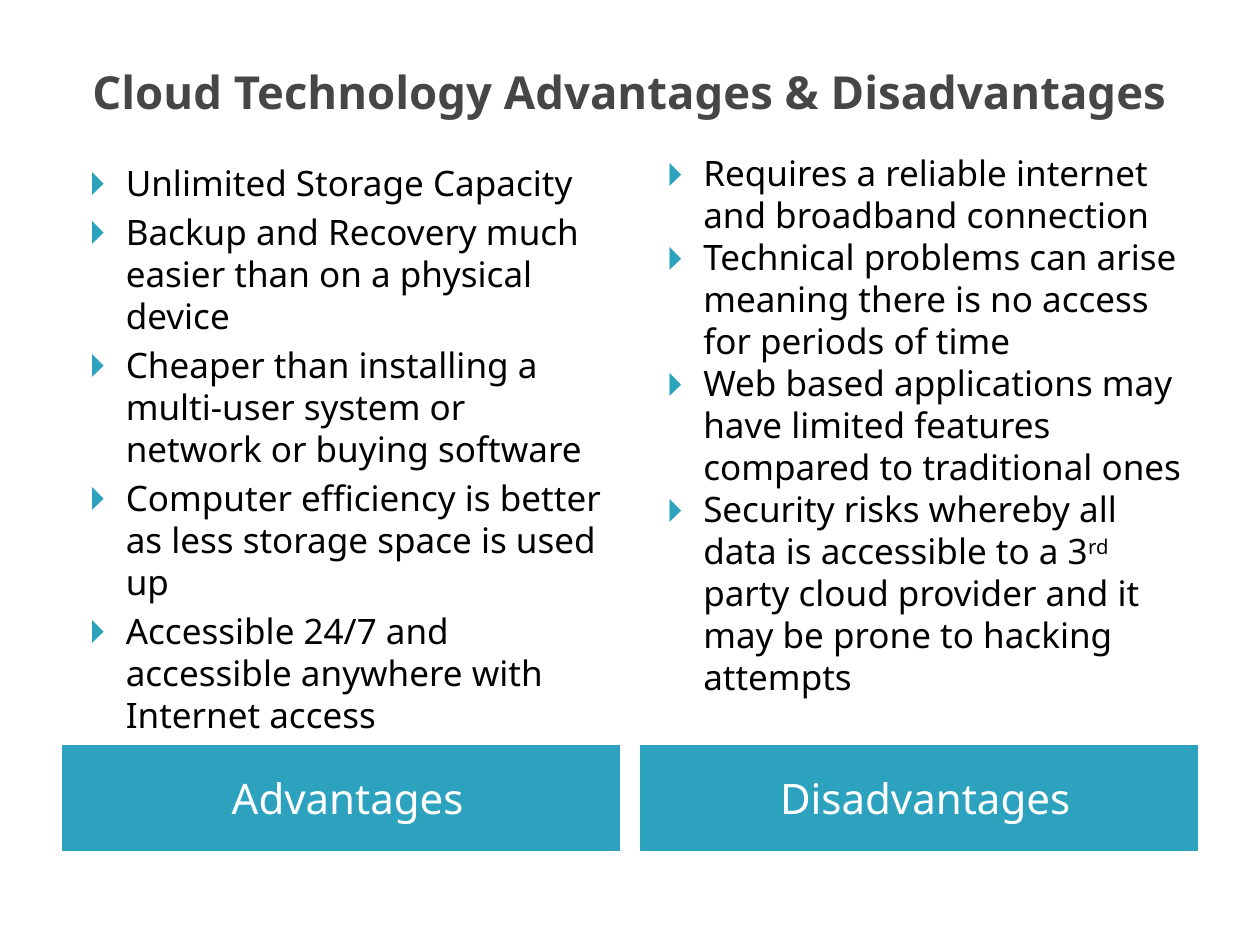
from dataclasses import dataclass

from lxml.etree import SubElement
from pptx import Presentation
from pptx.dml.color import RGBColor
from pptx.enum.shapes import MSO_SHAPE
from pptx.enum.text import MSO_ANCHOR, PP_ALIGN
from pptx.oxml.ns import qn
from pptx.util import Pt


@dataclass(frozen=True)
class Theme:
    font: str = "Noto Sans"
    accent: str = "2DA2BF"
    heading: str = "464646"
    body: str = "000000"
    on_accent: str = "FFFFFF"
    title_size: int = 26
    label_size: int = 24
    body_size: int = 20


THEME = Theme()
MARGIN, COLUMN_W, COLUMN_GAP = 36, 318, 12
BODY_BOTTOM = 424
LABEL_TOP, LABEL_H = 426, 60

ADVANTAGES = [
    ["Unlimited Storage Capacity"],
    ["Backup and Recovery much easier than on a physical device"],
    ["Cheaper than installing a multi-user system or network or buying software"],
    ["Computer efficiency is better as less storage space is used up"],
    ["Accessible 24/7 and accessible anywhere with Internet access"],
]
DISADVANTAGES = [
    ["Requires a reliable internet and broadband connection"],
    ["Technical problems can arise meaning there is no access for periods of time"],
    ["Web based applications may have limited features compared to traditional ones"],
    ["Security risks whereby all data is accessible to a 3", ("rd", 30),
     " party cloud provider and it may be prone to hacking attempts"],
]
# Label, bullets, top of the bullets, space between bullets
COLUMNS = [
    ("Advantages", ADVANTAGES, 88.5, 4),
    ("Disadvantages", DISADVANTAGES, 83, 0),
]


def add_run(p, text, size, color, bold=False, raised=0):
    r = p.add_run()
    r.text = text
    r.font.name = THEME.font
    r.font.size = Pt(size)
    r.font.bold = bold
    r.font.color.rgb = RGBColor.from_string(color)
    if raised:
        r.font._element.set("baseline", str(raised * 1000))


def add_bullet(p):
    pPr = p._p.get_or_add_pPr()
    pPr.set("marL", str(Pt(28.8)))
    pPr.set("indent", str(Pt(-20.16)))
    color = SubElement(pPr, qn("a:buClr"))
    SubElement(color, qn("a:srgbClr"), val=THEME.accent)
    SubElement(pPr, qn("a:buFont"), typeface=THEME.font)
    SubElement(pPr, qn("a:buChar"), char="🞂")


def add_title(slide, box, text):
    tf = slide.shapes.add_textbox(*map(Pt, box)).text_frame
    tf.word_wrap = True
    tf.vertical_anchor = MSO_ANCHOR.MIDDLE
    p = tf.paragraphs[0]
    p.alignment = PP_ALIGN.CENTER
    add_run(p, text, THEME.title_size, THEME.heading, bold=True)


def add_bullets(slide, box, items, gap):
    tf = slide.shapes.add_textbox(*map(Pt, box)).text_frame
    tf.word_wrap = True
    for i, item in enumerate(items):
        p = tf.add_paragraph() if i else tf.paragraphs[0]
        add_bullet(p)
        p.line_spacing = Pt(24)
        p.space_before = Pt(gap if i else 0)
        for part in item:
            text, raised = (part, 0) if isinstance(part, str) else part
            add_run(p, text, THEME.body_size, THEME.body, raised=raised)


def add_label(slide, box, text):
    sp = slide.shapes.add_shape(MSO_SHAPE.RECTANGLE, *map(Pt, box))
    sp.shadow.inherit = False
    sp.fill.solid()
    sp.fill.fore_color.rgb = RGBColor.from_string(THEME.accent)
    sp.line.color.rgb = RGBColor.from_string(THEME.accent)
    sp.line.width = Pt(0.75)
    tf = sp.text_frame
    tf.word_wrap = True
    tf.vertical_anchor = MSO_ANCHOR.MIDDLE
    tf.margin_left = Pt(14.4)
    p = tf.paragraphs[0]
    p.alignment = PP_ALIGN.CENTER
    add_run(p, text, THEME.label_size, THEME.on_accent)


def main():
    prs = Presentation()
    prs.slide_width, prs.slide_height = Pt(720), Pt(540)
    s = prs.slides.add_slide(prs.slide_layouts[6])

    # Title
    add_title(s, (MARGIN, 21.6, 648, 61.2), "Cloud Technology Advantages & Disadvantages")

    # Bullets with their label below, one column each
    for i, (label, items, top, gap) in enumerate(COLUMNS):
        left = MARGIN + i * (COLUMN_W + COLUMN_GAP)
        add_label(s, (left, LABEL_TOP, COLUMN_W, LABEL_H), label)
        add_bullets(s, (left, top, COLUMN_W, BODY_BOTTOM - top), items, gap)

    prs.save("out.pptx")


if __name__ == "__main__":
    main()
